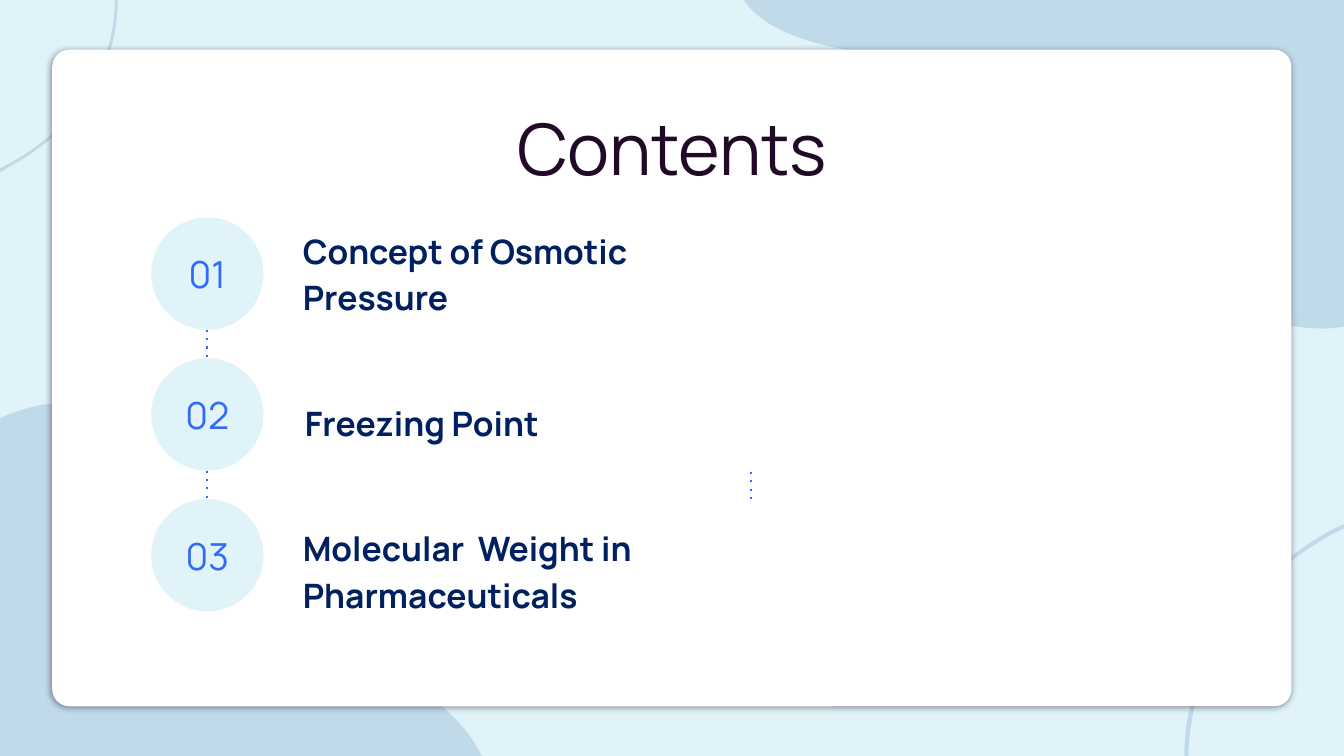
"""Build the contents slide with a numbered list on a white card."""
import lxml.etree
import pptx
import pptx.dml.color
import pptx.enum.shapes
import pptx.enum.text
import pptx.oxml.ns
import pptx.util

Pt = pptx.util.Pt
qn = pptx.oxml.ns.qn
Align = pptx.enum.text.PP_ALIGN
Anchor = pptx.enum.text.MSO_ANCHOR
Preset = pptx.enum.shapes.MSO_SHAPE

PALE = pptx.dml.color.RGBColor(0xDF, 0xF3, 0xF8)
WAVE = pptx.dml.color.RGBColor(0xA0, 0xBF, 0xDB)
WHITE = pptx.dml.color.RGBColor(0xFF, 0xFF, 0xFF)
PLUM = pptx.dml.color.RGBColor(0x21, 0x0A, 0x26)
NAVY = pptx.dml.color.RGBColor(0x00, 0x20, 0x60)
BLUE = pptx.dml.color.RGBColor(0x31, 0x69, 0xF8)

INSET = 9.5
ITEM_TOP, ITEM_PITCH, ITEM_HEIGHT, ITEM_BOTTOM_INSET = 165.6, 106.2, 80, 33.5
ITEMS = [
    ("Concept of Osmotic Pressure", 206.8, 260, INSET),
    ("Freezing Point", 196, 260, 21.8),
    ("Molecular  Weight in Pharmaceuticals", 206.8, 330, INSET),
]
CIRCLE_LEFT, CIRCLE_TOP, CIRCLE_SIZE, CIRCLE_PITCH = 108, 155.3, 80.2, 100.6
STRAY_LINE_X = 536.5

WAVES = [
    [(848.9, 540), (849.6, 505.4, 861.1, 470.2, 882, 442.1),
     (902.2, 414, 929.5, 392.4, 960, 377.3), (960, 374.4),
     (956.9, 375.8, 953.3, 377.3, 949.7, 379.4),
     (925.2, 393.1, 902.2, 411.8, 884.2, 434.2),
     (866.2, 457.9, 853.2, 484.6, 848.2, 514.1),
     (846.7, 522.7, 846, 531.4, 846, 540)],
    [(43.2, 288), (22.3, 288, 0, 298.8, 0, 298.8), (0, 540), (344.2, 540),
     (300.2, 452.9, 164.2, 469.4, 107.3, 452.2),
     (51.1, 435.6, 113, 352.1, 82.8, 307.4),
     (72, 292.3, 57.6, 288, 43.2, 288)],
    [(531.4, 0), (547.2, 25.2, 599, 41.8, 683.3, 41.8),
     (686.2, 41.8, 689.8, 41.8, 692.6, 41.8),
     (694.1, 41.8, 694.8, 41.8, 696.2, 41.8),
     (822.2, 41.8, 769.7, 153.4, 863.3, 211.7),
     (888.5, 227.5, 920.9, 234.7, 946.1, 234.7),
     (951.1, 234.7, 955.4, 234, 960, 233.3), (960, 0)],
    [(82.1, 0), (82.1, 25.9, 73.4, 51.8, 58.3, 72.7),
     (43.2, 92.9, 22.3, 109.4, 0, 120.2), (0, 123.1),
     (2.9, 121.7, 5, 120.2, 7.2, 118.8),
     (25.9, 108.7, 43.2, 95, 56.2, 78.5),
     (69.8, 61.2, 79.2, 41, 82.8, 19.4),
     (83.5, 13, 84.2, 6.5, 84.2, 0)],
]


def write_text(shape, text, *, font, size, color, bold=False, align=Align.LEFT,
               anchor=Anchor.TOP, line_spacing=1.0, left_inset=INSET,
               bottom_inset=INSET):
    frame = shape.text_frame
    frame.text = text
    frame.word_wrap = True
    frame.auto_size = pptx.enum.text.MSO_AUTO_SIZE.NONE
    frame.vertical_anchor = anchor
    frame.margin_left, frame.margin_right = Pt(left_inset), Pt(INSET)
    frame.margin_top, frame.margin_bottom = Pt(INSET), Pt(bottom_inset)
    paragraph = frame.paragraphs[0]
    paragraph.alignment = align
    paragraph.line_spacing = line_spacing
    paragraph.space_before = Pt(0)
    run = paragraph.runs[0]
    run.font.name = font
    run.font.size = Pt(size)
    run.font.bold = bold
    run.font.color.rgb = color


class SlideBuilder:
    font = "Manrope"

    def __init__(self, slide):
        self.slide = slide
        slide.background.fill.solid()
        slide.background.fill.fore_color.rgb = PALE

    def paint(self, shape, color):
        shape.shadow.inherit = False
        shape.fill.solid()
        shape.fill.fore_color.rgb = color
        shape.line.fill.background()

    def wave(self, outline):
        corners = [(Pt(segment[-2]), Pt(segment[-1])) for segment in outline]
        builder = self.slide.shapes.build_freeform(*corners[0])
        builder.add_line_segments(corners[1:], close=False)
        shape = builder.convert_to_shape()
        self.paint(shape, WAVE)
        color = shape.element.spPr.find(qn("a:solidFill"))[0]
        lxml.etree.SubElement(color, qn("a:alpha"), val="48000")
        lines = list(shape.element.iter(qn("a:lnTo")))
        for line, segment in zip(lines, outline[1:]):
            if len(segment) == 6:
                self.bend(line, segment, shape.left, shape.top)
        lxml.etree.SubElement(lines[-1].getparent() if len(outline[-1]) == 2
                              else next(shape.element.iter(qn("a:moveTo"))).getparent(),
                              qn("a:close"))

    def bend(self, line, segment, left, top):
        curve = lxml.etree.Element(qn("a:cubicBezTo"))
        for x, y in zip(segment[::2], segment[1::2]):
            lxml.etree.SubElement(curve, qn("a:pt"), x=str(Pt(x) - left),
                                  y=str(Pt(y) - top))
        line.getparent().replace(line, curve)

    def preset(self, kind, left, top, width, height, color):
        shape = self.slide.shapes.add_shape(kind, Pt(left), Pt(top), Pt(width), Pt(height))
        self.paint(shape, color)
        return shape

    def card(self, left, top, width, height):
        shape = self.preset(Preset.ROUNDED_RECTANGLE, left, top, width, height, WHITE)
        shape.adjustments[0] = 0.026
        effects = shape.element.spPr.find(qn("a:effectLst"))
        shadow = lxml.etree.SubElement(
            effects, qn("a:outerShdw"), blurRad=str(Pt(4.5)), dist=str(Pt(1.5)),
            dir="5400000", algn="bl", rotWithShape="0")
        color = lxml.etree.SubElement(shadow, qn("a:srgbClr"), val=str(PLUM))
        lxml.etree.SubElement(color, qn("a:alpha"), val="50000")

    def title(self, text, left, top, width, height):
        shape = self.slide.shapes.title
        self.slide.shapes.element.append(shape.element)
        shape.left, shape.top = Pt(left), Pt(top)
        shape.width, shape.height = Pt(width), Pt(height)
        write_text(shape, text, font=self.font, size=50.67, color=PLUM,
                   align=Align.CENTER, line_spacing=1.15)

    def item(self, text, left, top, width, height, left_inset):
        shape = self.slide.shapes.add_textbox(Pt(left), Pt(top), Pt(width), Pt(height))
        write_text(shape, text, font=self.font, size=24, color=NAVY, bold=True,
                   anchor=Anchor.MIDDLE, line_spacing=1.15,
                   left_inset=left_inset, bottom_inset=ITEM_BOTTOM_INSET)

    def number(self, text, left, top, size):
        circle = self.preset(Preset.OVAL, left, top, size, size, PALE)
        write_text(circle, text, font=self.font, size=26.67, color=BLUE,
                   align=Align.CENTER, anchor=Anchor.MIDDLE)

    def dotted_line(self, x, start, end):
        connector = self.slide.shapes.add_connector(
            pptx.enum.shapes.MSO_CONNECTOR.STRAIGHT, Pt(x), Pt(start), Pt(x), Pt(end))
        connector.line.color.rgb = BLUE
        connector.line.width = Pt(1.5)
        properties = connector.element.spPr
        lxml.etree.SubElement(properties.find(qn("a:ln")), qn("a:prstDash"), val="dot")
        lxml.etree.SubElement(properties, qn("a:effectLst"))


def main():
    presentation = pptx.Presentation()
    presentation.slide_width, presentation.slide_height = Pt(960), Pt(540)
    slide = presentation.slides.add_slide(presentation.slide_layouts[5])
    builder = SlideBuilder(slide)
    for outline in WAVES:
        builder.wave(outline)
    builder.card(37.3, 35.5, 885.2, 469)
    builder.title("Contents", 75, 56, 810, 75)
    for index, (text, left, width, inset) in enumerate(ITEMS):
        builder.item(text, left, ITEM_TOP + index * ITEM_PITCH, width, ITEM_HEIGHT, inset)
        top = CIRCLE_TOP + index * CIRCLE_PITCH
        bottom_above = top - CIRCLE_PITCH + CIRCLE_SIZE
        builder.number(f"{index + 1:02}", CIRCLE_LEFT, top, CIRCLE_SIZE)
        if index:
            builder.dotted_line(CIRCLE_LEFT + CIRCLE_SIZE / 2, bottom_above, top)
    builder.dotted_line(STRAY_LINE_X, top, bottom_above)
    presentation.save("out.pptx")


if __name__ == "__main__":
    main()
